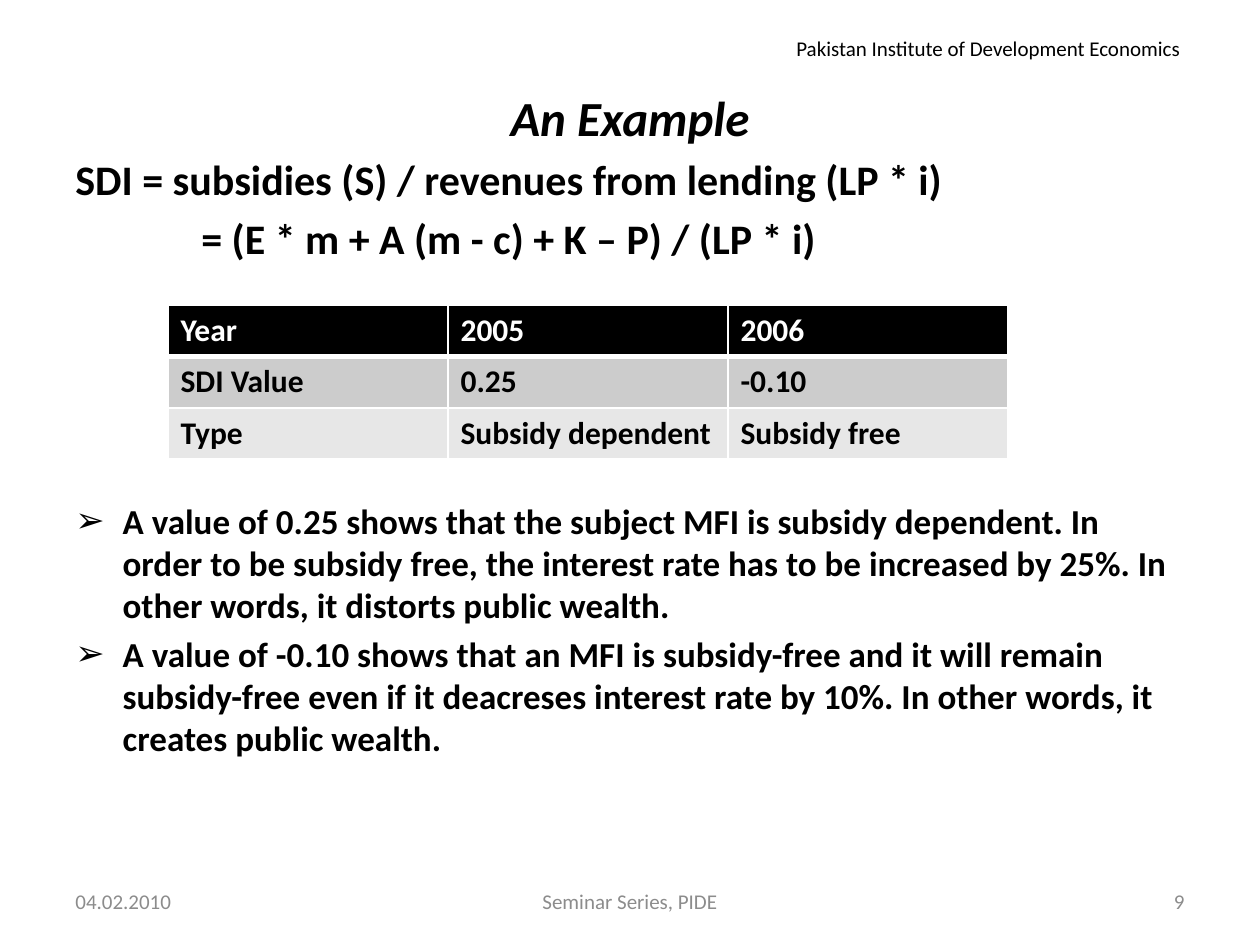
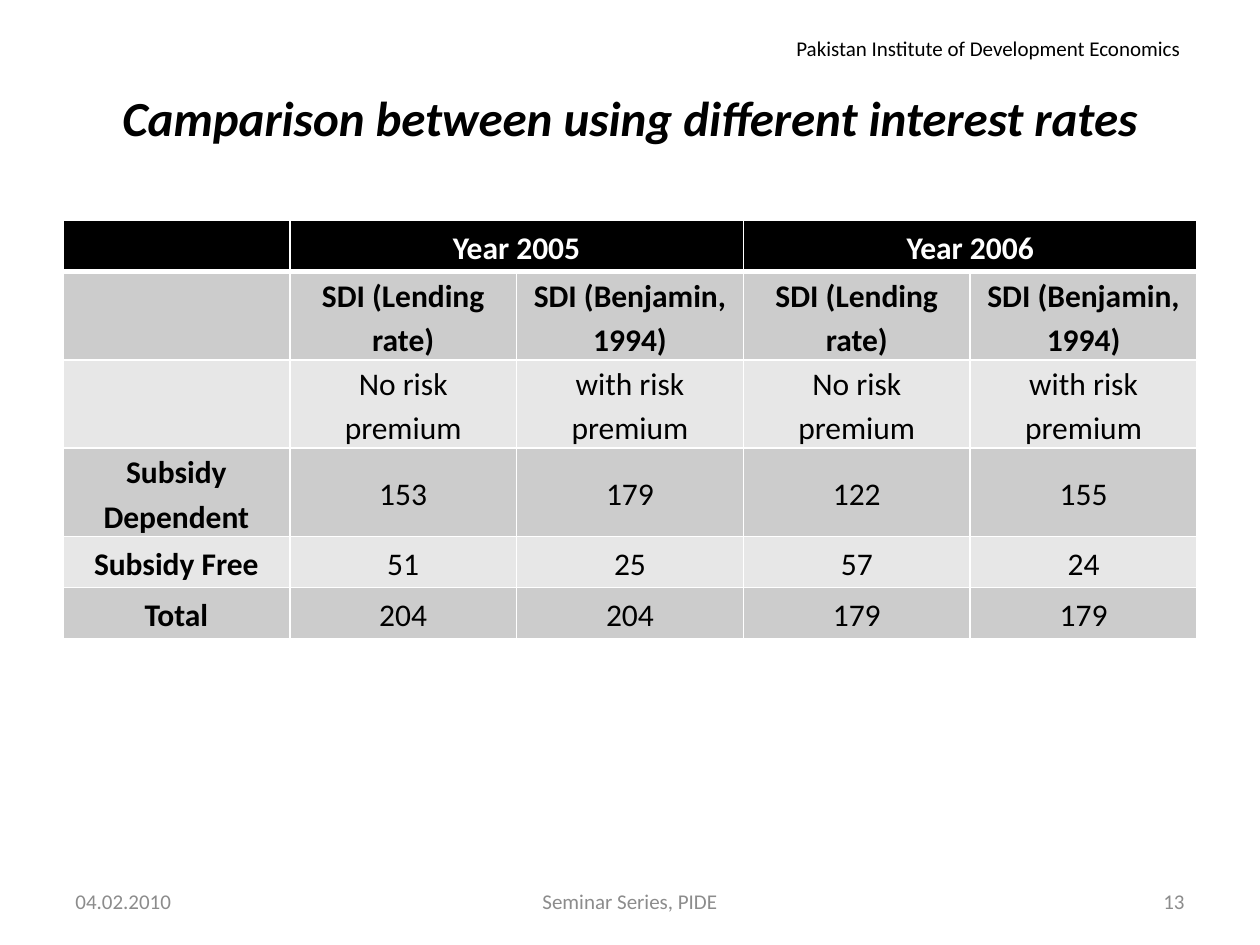
import lxml.etree
import pptx
import pptx.dml.color
import pptx.enum.text
import pptx.oxml.ns
import pptx.util

Pt = pptx.util.Pt
ALIGN = pptx.enum.text.PP_ALIGN
MIDDLE = pptx.enum.text.MSO_ANCHOR.MIDDLE
qn = pptx.oxml.ns.qn

FONT = "Calibri"
COLORS = {
    "text": "000000",
    "footer": "8C8C8C",
    "header_fill": "000000",
    "header_text": "FFFFFF",
    "band_dark": "CCCCCC",
    "band_light": "E7E7E7",
    "border": "FFFFFF",
}
TITLE_BOX = (36, 21.6, 648, 90)
INSTITUTE_BOX = (416, 16.6, 270, 21.6)
FOOTER_TOP, FOOTER_HEIGHT = 500.4, 28.8
ROW_HEIGHT, TALL_ROW_HEIGHT = 29.3, 50.4


def rgb(name):
    return pptx.dml.color.RGBColor.from_string(COLORS[name])


def style_paragraph(paragraph, size, color="text", bold=False, align=ALIGN.LEFT):
    paragraph.alignment = align
    font = paragraph.font
    font.name, font.size, font.bold = FONT, Pt(size), bold
    font.color.rgb = rgb(color)


def add_text_box(slide, box):
    frame = slide.shapes.add_textbox(*map(Pt, box)).text_frame
    frame.word_wrap = True
    return frame


def add_title(slide, box, text):
    title = slide.shapes.title
    title.left, title.top, title.width, title.height = map(Pt, box)
    frame = title.text_frame
    frame.text = text
    frame.vertical_anchor = MIDDLE
    style_paragraph(frame.paragraphs[0], 28, bold=True, align=ALIGN.CENTER)
    frame.paragraphs[0].font.italic = True


def add_institute(slide, box):
    frame = add_text_box(slide, box)
    frame.margin_right = Pt(11.5)
    frame.text = "Pakistan Institute of Development Economics"
    style_paragraph(frame.paragraphs[0], 12, align=ALIGN.RIGHT)


def add_footer(slide, number):
    parts = [
        (36, 168, "04.02.2010", ALIGN.LEFT),
        (246, 228, "Seminar Series, PIDE", ALIGN.CENTER),
        (516, 168, str(number), ALIGN.RIGHT),
    ]
    for left, width, text, align in parts:
        frame = add_text_box(slide, (left, FOOTER_TOP, width, FOOTER_HEIGHT))
        frame.text = text
        frame.vertical_anchor = MIDDLE
        style_paragraph(frame.paragraphs[0], 12, "footer", align=align)


def add_titled_slide(presentation, title, number):
    slide = presentation.slides.add_slide(presentation.slide_layouts[5])
    add_title(slide, TITLE_BOX, title)
    add_institute(slide, INSTITUTE_BOX)
    add_footer(slide, number)
    return slide


def set_indent(paragraph, margin, first_line, bullet=None):
    properties = paragraph._p.get_or_add_pPr()
    properties.set("marL", str(Pt(margin)))
    properties.set("indent", str(Pt(first_line)))
    if bullet:
        lxml.etree.SubElement(properties, qn("a:buFont"), typeface="Arial")
        lxml.etree.SubElement(properties, qn("a:buChar"), char=bullet)


def add_body(slide, box, lines):
    """Each line is (text, size, space before, margin, first line, bullet)."""
    frame = add_text_box(slide, box)
    frame.text = "\n".join(line[0] for line in lines)
    for paragraph, (_, size, space, margin, first_line, bullet) in zip(frame.paragraphs, lines):
        style_paragraph(paragraph, size, bold=True)
        paragraph.space_before = Pt(space)
        set_indent(paragraph, margin, first_line, bullet)


def set_borders(cell, bottom):
    properties = cell._tc.get_or_add_tcPr()
    for side, width in (("L", 1), ("R", 1), ("T", 1), ("B", bottom)):
        line = lxml.etree.SubElement(properties, qn(f"a:ln{side}"), w=str(Pt(width)))
        fill = lxml.etree.SubElement(line, qn("a:solidFill"))
        lxml.etree.SubElement(fill, qn("a:srgbClr"), val=COLORS["border"])


def add_banded_table(slide, box, rows, row_heights):
    """Black header row, then alternating grey bands; returns the table."""
    table = slide.shapes.add_table(len(rows), len(rows[0]), *map(Pt, box)).table
    for row_index, (texts, height) in enumerate(zip(rows, row_heights)):
        table.rows[row_index].height = Pt(height)
        header = row_index == 0
        band = "band_dark" if row_index % 2 else "band_light"
        for column_index, text in enumerate(texts):
            cell = table.cell(row_index, column_index)
            cell.text = text
            set_borders(cell, 3 if header else 1)
            cell.fill.solid()
            cell.fill.fore_color.rgb = rgb("header_fill" if header else band)
            color = "header_text" if header else "text"
            style_paragraph(cell.text_frame.paragraphs[0], 18, color, bold=True)
    return table


def center_cells(table, first_plain_row):
    """Centre the filled cells; from the given row on only column 0 stays bold."""
    for row_index, row in enumerate(table.rows):
        for column_index, cell in enumerate(row.cells):
            if not cell.text:
                continue
            cell.vertical_anchor = MIDDLE
            cell.margin_left = cell.margin_right = Pt(5)
            cell.margin_top = cell.margin_bottom = 0
            paragraph = cell.text_frame.paragraphs[0]
            paragraph.alignment = ALIGN.CENTER
            paragraph.line_spacing = 1.15
            paragraph.font.bold = row_index < first_plain_row or column_index == 0


def build_example_slide(presentation):
    slide = add_titled_slide(presentation, "An Example", 9)
    table_gap = 135
    add_body(slide, (36, 84.2, 648, 398), [
        ("SDI = subsidies (S) / revenues from lending (LP * i)", 24, 4.8, 27, -27, None),
        ("= (E * m + A (m - c) + K – P) / (LP * i)", 24, 4.8, 90, -18, None),
        ("A value of 0.25 shows that the subject MFI is subsidy dependent. In order to be "
         "subsidy free, the interest rate has to be increased by 25%. In other words, it "
         "distorts public wealth.", 20, table_gap, 27, -27, "➢"),
        ("A value of -0.10 shows that an MFI is subsidy-free and it will remain subsidy-free "
         "even if it deacreses interest rate by 10%. In other words, it creates public wealth.",
         20, 4, 27, -27, "➢"),
    ])
    rows = [
        ("Year", "2005", "2006"),
        ("SDI Value", "0.25", "-0.10"),
        ("Type", "Subsidy dependent", "Subsidy free"),
    ]
    add_banded_table(slide, (96, 174.5, 480, 3 * ROW_HEIGHT), rows, [ROW_HEIGHT] * 3)


def build_comparison_slide(presentation):
    slide = add_titled_slide(presentation, "Camparison between using different interest rates", 13)
    rows = [
        ("", "Year 2005", "", "Year 2006", ""),
        ("", *("SDI (Lending rate)", "SDI (Benjamin, 1994)") * 2),
        ("", *("No risk premium", "with risk premium") * 2),
        ("Subsidy Dependent", "153", "179", "122", "155"),
        ("Subsidy Free", "51", "25", "57", "24"),
        ("Total", "204", "204", "179", "179"),
    ]
    heights = [ROW_HEIGHT] + [TALL_ROW_HEIGHT] * 3 + [ROW_HEIGHT] * 2
    table = add_banded_table(slide, (36, 126, 648, sum(heights)), rows, heights)
    center_cells(table, first_plain_row=2)
    for column in (1, 3):
        table.cell(0, column).merge(table.cell(0, column + 1))


def main():
    presentation = pptx.Presentation()
    presentation.slide_width, presentation.slide_height = Pt(720), Pt(540)
    build_example_slide(presentation)
    build_comparison_slide(presentation)
    presentation.save("out.pptx")


if __name__ == "__main__":
    main()
